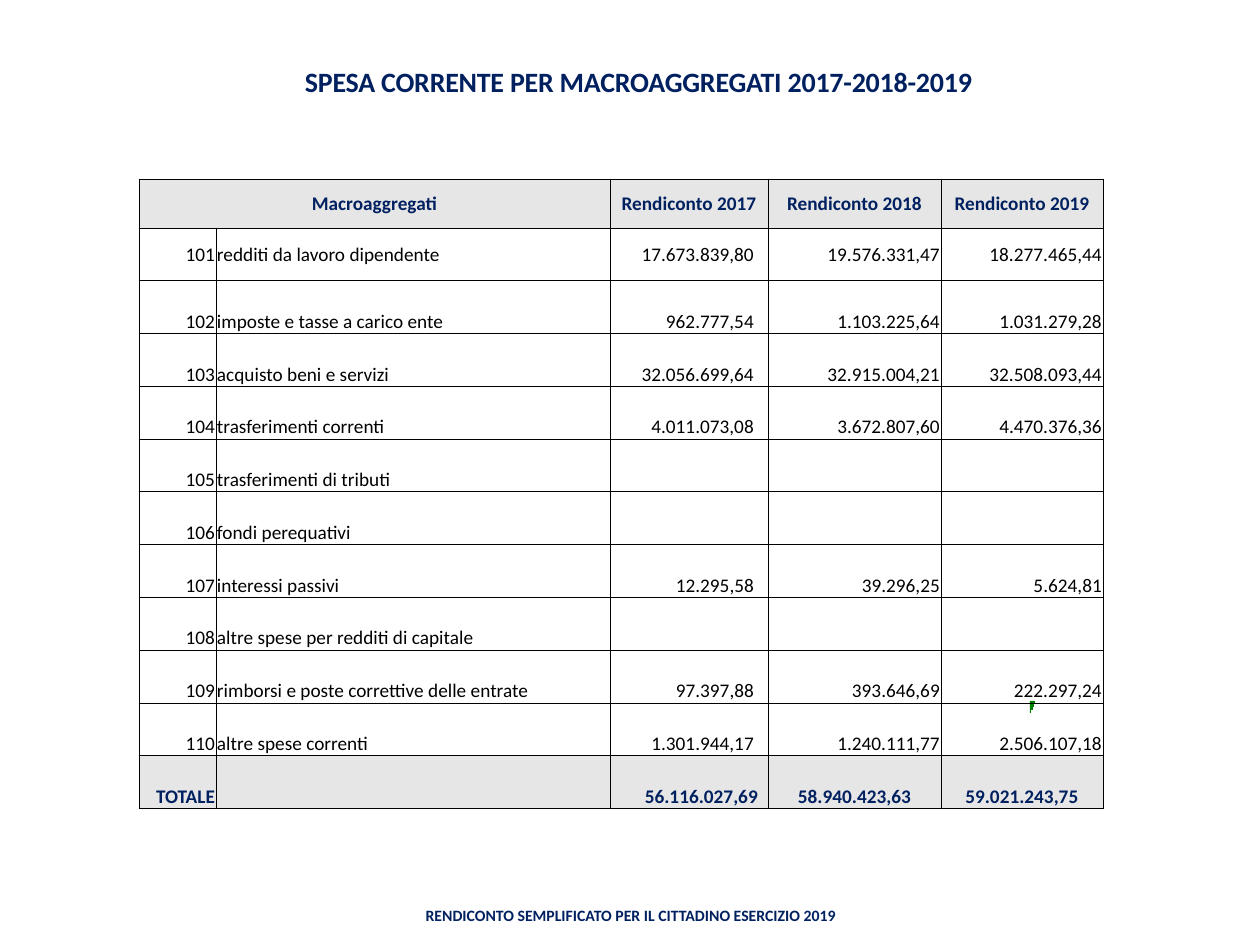
from lxml import etree
from pptx import Presentation
from pptx.dml.color import RGBColor
from pptx.enum.shapes import MSO_SHAPE
from pptx.enum.text import MSO_ANCHOR, PP_ALIGN
from pptx.oxml.ns import qn
from pptx.util import Emu, Pt

LEFT, MID, RIGHT = PP_ALIGN.LEFT, PP_ALIGN.CENTER, PP_ALIGN.RIGHT
CENTER, BOTTOM = MSO_ANCHOR.MIDDLE, MSO_ANCHOR.BOTTOM
NAVY = RGBColor(0x00, 0x20, 0x60)
BLACK = RGBColor(0x00, 0x00, 0x00)
GRAY = RGBColor(0xE7, 0xE6, 0xE6)
GREEN = RGBColor(0x00, 0x80, 0x00)

TITLE = "SPESA CORRENTE PER MACROAGGREGATI 2017-2018-2019"
FOOTER = "RENDICONTO SEMPLIFICATO PER IL CITTADINO ESERCIZIO 2019"
HEAD = ("Macroaggregati", "", "Rendiconto 2017", "Rendiconto 2018", "Rendiconto 2019")
BODY = [
    ("101", "redditi da lavoro dipendente", "17.673.839,80", "19.576.331,47", "18.277.465,44"),
    ("102", "imposte e tasse a carico ente", "962.777,54", "1.103.225,64", "1.031.279,28"),
    ("103", "acquisto beni e servizi", "32.056.699,64", "32.915.004,21", "32.508.093,44"),
    ("104", "trasferimenti correnti", "4.011.073,08", "3.672.807,60", "4.470.376,36"),
    ("105", "trasferimenti di tributi", "", "", ""),
    ("106", "fondi perequativi", "", "", ""),
    ("107", "interessi passivi", "12.295,58", "39.296,25", "5.624,81"),
    ("108", "altre spese per redditi di capitale", "", "", ""),
    ("109", "rimborsi e poste correttive delle entrate", "97.397,88", "393.646,69", "222.297,24"),
    ("110", "altre spese correnti", "1.301.944,17", "1.240.111,77", "2.506.107,18"),
]
TOTAL = ("TOTALE", "", "56.116.027,69", "58.940.423,63", "59.021.243,75")

COLS = (77, 394, 158, 173, 162)
HEAD_H, TABLE_H = 49, 630
HEAD_AL = (MID,) * 5
BODY_AL = (RIGHT, LEFT, RIGHT, RIGHT, RIGHT)
TOTAL_AL = (RIGHT, LEFT, RIGHT, MID, MID)
FLAG = (5, 4, 3, 1)


def px(n):
    return Emu(round(n * 914400 / 126))


def style(para, size, color, bold, align):
    para.alignment = align
    font = para.font
    font.name, font.size, font.bold = "Calibri", Pt(size), bold
    font.color.rgb = color


def label(slide, text, box, size, anchor, align):
    frame = slide.shapes.add_textbox(*map(px, box)).text_frame
    frame.word_wrap = True
    frame.vertical_anchor = anchor
    frame.margin_left = frame.margin_right = 0
    frame.margin_top = frame.margin_bottom = 0
    para = frame.paragraphs[0]
    para.text = text
    style(para, size, NAVY, True, align)
    return para


def border(cell):
    props = cell._tc.get_or_add_tcPr()
    for i, side in enumerate(("a:lnL", "a:lnR", "a:lnT", "a:lnB")):
        line = etree.Element(qn(side), w=str(Pt(0.5)))
        fill = etree.SubElement(line, qn("a:solidFill"))
        etree.SubElement(fill, qn("a:srgbClr"), val=str(BLACK))
        props.insert(i, line)


def fill_cell(cell, text, align, anchor, strong, inset):
    cell.margin_left = cell.margin_top = px(1)
    cell.margin_right = px(inset)
    cell.margin_bottom = 0
    cell.vertical_anchor = anchor
    para = cell.text_frame.paragraphs[0]
    para.text = text
    style(para, 11, NAVY if strong else BLACK, strong, align)
    if strong:
        cell.fill.solid()
        cell.fill.fore_color.rgb = GRAY
    else:
        cell.fill.background()
    border(cell)


def add_grid(slide):
    rows = [HEAD, *BODY, TOTAL]
    last = len(rows) - 1
    frame = slide.shapes.add_table(
        len(rows), len(COLS), px(139), px(179), px(sum(COLS)), px(TABLE_H))
    table = frame.table
    table.first_row = table.horz_banding = False
    for col, width in zip(table.columns, COLS):
        col.width = px(width)
    for r, row in enumerate(rows):
        table.rows[r].height = px((TABLE_H - HEAD_H) / last if r else HEAD_H)
        strong = r in (0, last)
        aligns = {0: HEAD_AL, last: TOTAL_AL}.get(r, BODY_AL)
        anchor = CENTER if r < 2 else BOTTOM
        for c, text in enumerate(row):
            inset = 1
            if c == 2 and r:
                inset = 10 if strong else 14
            fill_cell(table.cell(r, c), text, aligns[c], anchor, strong, inset)
    table.cell(0, 0).merge(table.cell(0, 1))


def add_flag(slide):
    for i, width in enumerate(FLAG):
        bar = slide.shapes.add_shape(
            MSO_SHAPE.RECTANGLE, px(1030), px(701 + 3 * i), px(width), px(3))
        bar.shadow.inherit = False
        bar.fill.solid()
        bar.fill.fore_color.rgb = GREEN
        bar.line.fill.background()


def main():
    deck = Presentation()
    deck.slide_width, deck.slide_height = px(1260), px(945)
    slide = deck.slides.add_slide(deck.slide_layouts[6])
    title = label(slide, TITLE, (305, 63, 730, 35), 16, BOTTOM, LEFT)
    title.runs[0]._r.get_or_add_rPr().set("spc", "-10")
    add_flag(slide)
    label(slide, FOOTER, (381, 890, 499, 50), 9, CENTER, MID)
    add_grid(slide)
    deck.save("out.pptx")


if __name__ == "__main__":
    main()
